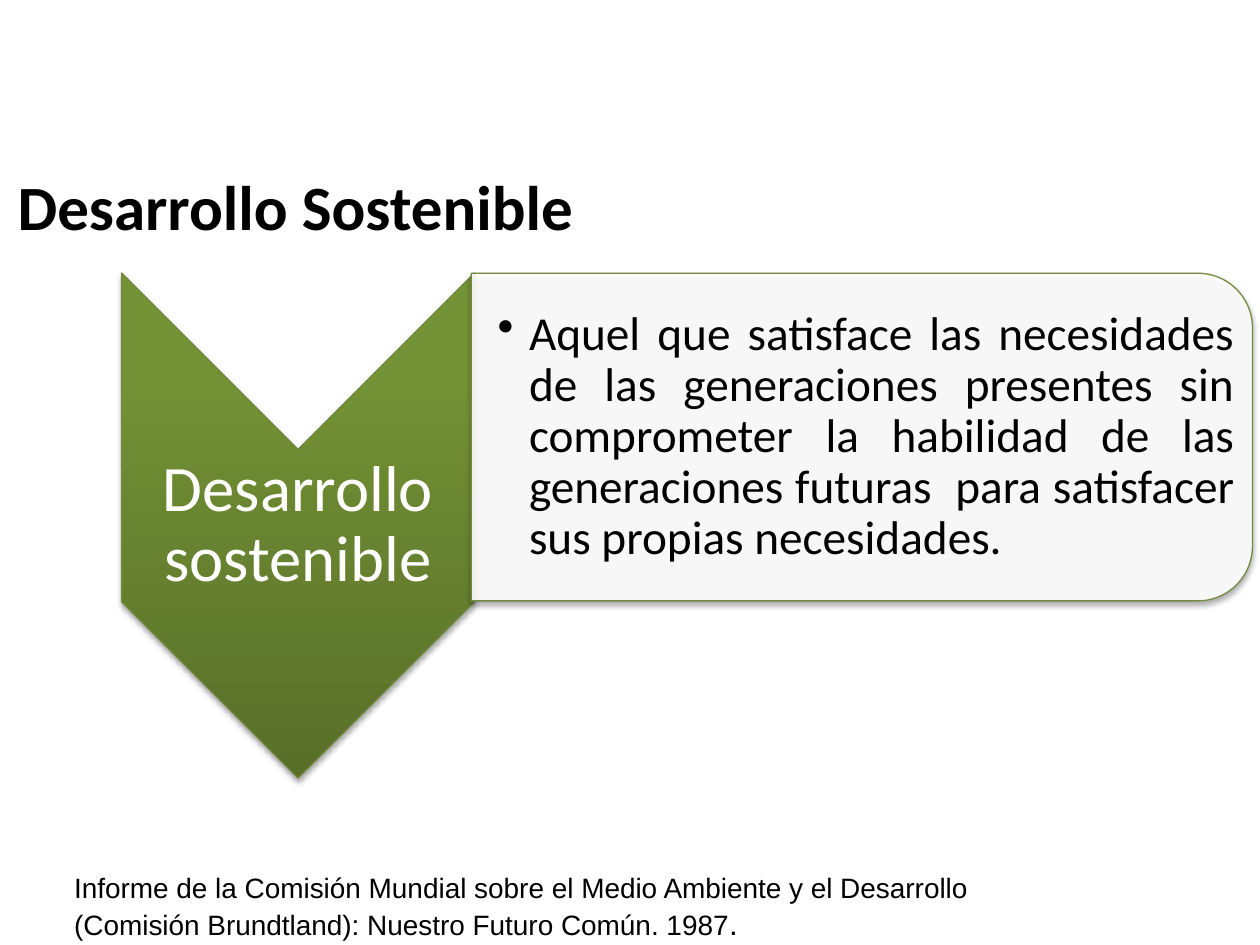
from dataclasses import dataclass

from lxml.etree import SubElement
from pptx import Presentation
from pptx.dml.color import RGBColor
from pptx.enum.shapes import MSO_SHAPE as Shape
from pptx.enum.text import MSO_ANCHOR as Anchor, PP_ALIGN as Align
from pptx.oxml import parse_xml
from pptx.oxml.ns import nsdecls, qn
from pptx.util import Pt


@dataclass(frozen=True)
class Theme:
    ink: str = "000000"
    paper: str = "FFFFFF"
    outline: str = "738A42"
    gradient: tuple = ((0, "586F29"), (80, "739135"), (100, "749334"))
    body_font: str = "Calibri"
    note_font: str = "Arial"
    title_size: float = 36
    label_size: float = 37
    definition_size: float = 27
    note_size: float = 16
    note_end_size: float = 18


THEME = Theme()


def set_values(target, values):
    for name, value in values.items():
        setattr(target, name, value)


def add_run(paragraph, text, size, font=THEME.body_font, color=THEME.ink, bold=False):
    run = paragraph.add_run()
    run.text = text
    set_values(run.font, {"name": font, "size": Pt(size), "bold": bold})
    run.font.color.rgb = RGBColor.from_string(color)


def add_text_box(slide, box, anchor=Anchor.MIDDLE, insets=(7.2, 3.6, 7.2, 3.6)):
    """Add a wrapping text box and return its first paragraph."""
    frame = slide.shapes.add_textbox(*map(Pt, box)).text_frame
    left, top, right, bottom = map(Pt, insets)
    set_values(frame, {
        "word_wrap": True, "vertical_anchor": anchor,
        "margin_left": left, "margin_top": top,
        "margin_right": right, "margin_bottom": bottom,
    })
    return frame.paragraphs[0]


def add_turned_shape(slide, kind, box):
    """Add an outlined, shadowed shape that fills the box after a quarter turn."""
    left, top, width, height = box
    shift = (width - height) / 2
    shape = slide.shapes.add_shape(
        kind, Pt(left + shift), Pt(top - shift), Pt(height), Pt(width))
    shape.rotation = 90
    shape.fill.solid()
    shape.fill.fore_color.rgb = RGBColor.from_string(THEME.paper)
    shape.line.color.rgb = RGBColor.from_string(THEME.outline)
    shape.line.width = Pt(0.75)
    # Soft shadow straight below
    shape.shadow.inherit = False
    effects = shape._element.spPr.find(qn("a:effectLst"))
    effects.append(parse_xml(
        f'<a:outerShdw {nsdecls("a")} blurRad="{Pt(3.1)}" dist="{Pt(1.8)}" '
        f'dir="5400000" rotWithShape="0"><a:srgbClr val="{THEME.ink}">'
        '<a:alpha val="35000"/></a:srgbClr></a:outerShdw>'))
    return shape


def add_title(slide, box):
    add_run(add_text_box(slide, box), "Desarrollo Sostenible", THEME.title_size, bold=True)


def add_chevron(slide, box):
    left, top, width, height = box
    shape = add_turned_shape(slide, Shape.CHEVRON, box)
    # Vertical gradient, dark at the tip
    stops = "".join(
        f'<a:gs pos="{position * 1000}"><a:srgbClr val="{color}"/></a:gs>'
        for position, color in THEME.gradient)
    properties = shape._element.spPr
    properties.replace(properties.find(qn("a:solidFill")), parse_xml(
        f'<a:gradFill {nsdecls("a")} rotWithShape="0"><a:gsLst>{stops}</a:gsLst>'
        '<a:lin ang="16200000" scaled="0"/></a:gradFill>'))
    # Label between the notch and the tip, each half the width deep
    notch = width / 2
    label_box = (left, top + notch, width, height - 2 * notch)
    paragraph = add_text_box(slide, label_box, insets=(2, 2, 2, 2))
    set_values(paragraph, {"alignment": Align.CENTER, "line_spacing": 0.9})
    add_run(paragraph, "Desarrollo sostenible", THEME.label_size, color=THEME.paper)


def add_definition(slide, box):
    left, top, width, height = box
    shape = add_turned_shape(slide, Shape.ROUND_2_SAME_RECTANGLE, box)
    color = shape._element.spPr.find(qn("a:solidFill")).find(qn("a:srgbClr"))
    SubElement(color, qn("a:alpha"), val="90000")
    # Bulleted text, clear of the rounded corners
    text_box = (left, top + 9, width - 9, height - 18)
    paragraph = add_text_box(slide, text_box, insets=(15, 1.5, 1.5, 1.5))
    set_values(paragraph, {"alignment": Align.JUSTIFY, "line_spacing": 0.9})
    properties = paragraph._p.get_or_add_pPr()
    properties.set("marL", str(Pt(18)))
    properties.set("indent", str(Pt(-18)))
    SubElement(properties, qn("a:buChar"), char="•")
    add_run(paragraph,
            "Aquel que satisface las necesidades de las generaciones presentes sin "
            "comprometer la habilidad de las generaciones futuras  para satisfacer "
            "sus propias necesidades.", THEME.definition_size)


def add_source_note(slide, box):
    paragraph = add_text_box(slide, box, anchor=Anchor.TOP)
    add_run(paragraph,
            "Informe de la Comisión Mundial sobre el Medio Ambiente y el Desarrollo "
            "(Comisión Brundtland): Nuestro Futuro Común. 1987",
            THEME.note_size, THEME.note_font)
    add_run(paragraph, ".", THEME.note_end_size, THEME.note_font)


def main():
    presentation = Presentation()
    set_values(presentation, {"slide_width": Pt(720), "slide_height": Pt(540)})
    slide = presentation.slides.add_slide(presentation.slide_layouts[6])
    add_title(slide, (3, 94.5, 648, 46))
    add_chevron(slide, (69.5, 156, 201.6, 288.7))
    add_definition(slide, (269.3, 156.2, 446.4, 187.2))
    add_source_note(slide, (35.3, 494, 551.5, 46))
    presentation.save("out.pptx")


if __name__ == "__main__":
    main()
